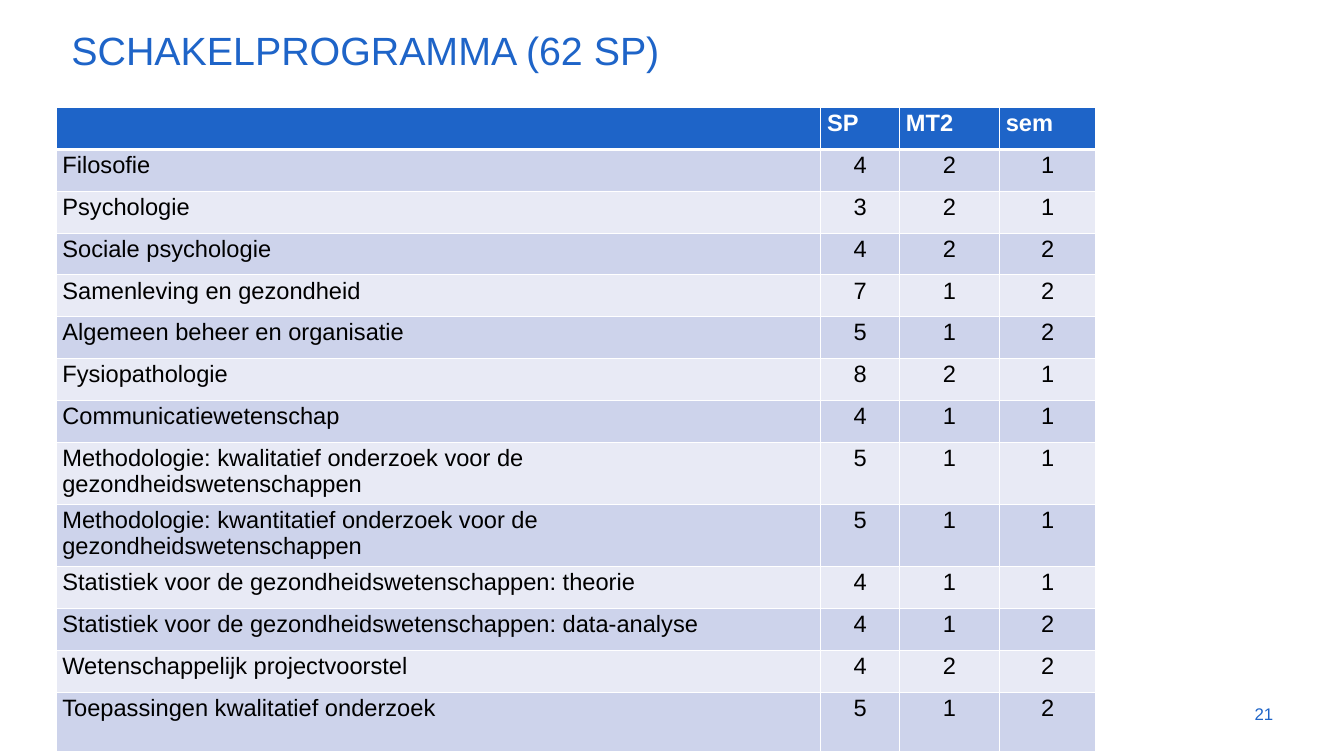
from lxml import etree
from pptx import Presentation
from pptx.dml.color import RGBColor
from pptx.enum import text as t
from pptx.oxml.ns import qn
from pptx.util import Inches, Pt

TITLE = "SCHAKELPROGRAMMA (62 SP)"
PAGE = "21"
HEAD = ("", "SP", "MT2", "sem")
COURSES = [
    ("Filosofie", 4, 2, 1),
    ("Psychologie", 3, 2, 1),
    ("Sociale psychologie", 4, 2, 2),
    ("Samenleving en gezondheid", 7, 1, 2),
    ("Algemeen beheer en organisatie", 5, 1, 2),
    ("Fysiopathologie", 8, 2, 1),
    ("Communicatiewetenschap", 4, 1, 1),
    ("Methodologie: kwalitatief onderzoek voor de gezondheidswetenschappen", 5, 1, 1),
    ("Methodologie: kwantitatief onderzoek voor de gezondheidswetenschappen", 5, 1, 1),
    ("Statistiek voor de gezondheidswetenschappen: theorie", 4, 1, 1),
    ("Statistiek voor de gezondheidswetenschappen: data-analyse", 4, 1, 2),
    ("Wetenschappelijk projectvoorstel", 4, 2, 2),
    ("Toepassingen kwalitatief onderzoek", 5, 1, 2),
]
COLS = (10.79, 1.11, 1.41, 1.36)
ROW, TALL = 0.59, 0.84
TALL_ROWS = (8, 9, 13)

FONT = "Arial"
BLUE = RGBColor(0x1E, 0x64, 0xC8)
DARK = RGBColor(0xCD, 0xD3, 0xEB)
PALE = RGBColor(0xE8, 0xEA, 0xF5)
WHITE = RGBColor(0xFF, 0xFF, 0xFF)
BLACK = RGBColor(0, 0, 0)


def write(frame, words, size, color, align, bold=False):
    para = frame.paragraphs[0]
    para.alignment = align
    run = para.add_run()
    run.text = words
    font = run.font
    font.name, font.size, font.bold = FONT, Pt(size), bold
    font.color.rgb = color
    return para


def label(slide, place, words, size, align, anchor):
    box = slide.shapes.add_textbox(*map(Inches, place))
    frame = box.text_frame
    frame.word_wrap = True
    frame.vertical_anchor = anchor
    return write(frame, words, size, BLUE, align)


def edge(cell, head):
    """Draw white cell borders, with a thick one under the header."""
    props = cell._tc.get_or_add_tcPr()
    for i, side in enumerate(("lnL", "lnR", "lnT", "lnB")):
        width = Pt(3 if head and side == "lnB" else 1)
        line = etree.Element(qn("a:" + side), w=str(width))
        fill = etree.SubElement(line, qn("a:solidFill"))
        etree.SubElement(fill, qn("a:srgbClr"), val=str(WHITE))
        props.insert(i, line)


def grid(slide):
    rows = [HEAD] + COURSES
    highs = [TALL if r in TALL_ROWS else ROW for r in range(len(rows))]
    place = map(Inches, (0.79, 1.52, sum(COLS), sum(highs)))
    table = slide.shapes.add_table(len(rows), len(COLS), *place).table
    for col, width in zip(table.columns, COLS):
        col.width = Inches(width)
    for r, (row, high) in enumerate(zip(rows, highs)):
        table.rows[r].height = Inches(high)
        head = r == 0
        for c, value in enumerate(row):
            cell = table.cell(r, c)
            cell.margin_left = cell.margin_right = Inches(0.09)
            cell.margin_top = cell.margin_bottom = Inches(0.04)
            cell.fill.solid()
            cell.fill.fore_color.rgb = BLUE if head else DARK if r % 2 else PALE
            edge(cell, head)
            if value != "":
                align = t.PP_ALIGN.LEFT if head or c == 0 else t.PP_ALIGN.CENTER
                write(cell.text_frame, str(value), 24, WHITE if head else BLACK, align, head)


def main():
    deck = Presentation()
    deck.slide_width, deck.slide_height = Inches(18.96), Inches(10.67)
    slide = deck.slides.add_slide(deck.slide_layouts[6])
    title = label(slide, (0.91, 0.15, 17.79, 0.94), TITLE, 40,
                  t.PP_ALIGN.LEFT, t.MSO_ANCHOR.BOTTOM)
    title.line_spacing = 0.9
    label(slide, (17.05, 9.79, 1.01, 0.57), PAGE, 17.1,
          t.PP_ALIGN.RIGHT, t.MSO_ANCHOR.MIDDLE)
    grid(slide)
    deck.save("out.pptx")


if __name__ == "__main__":
    main()
